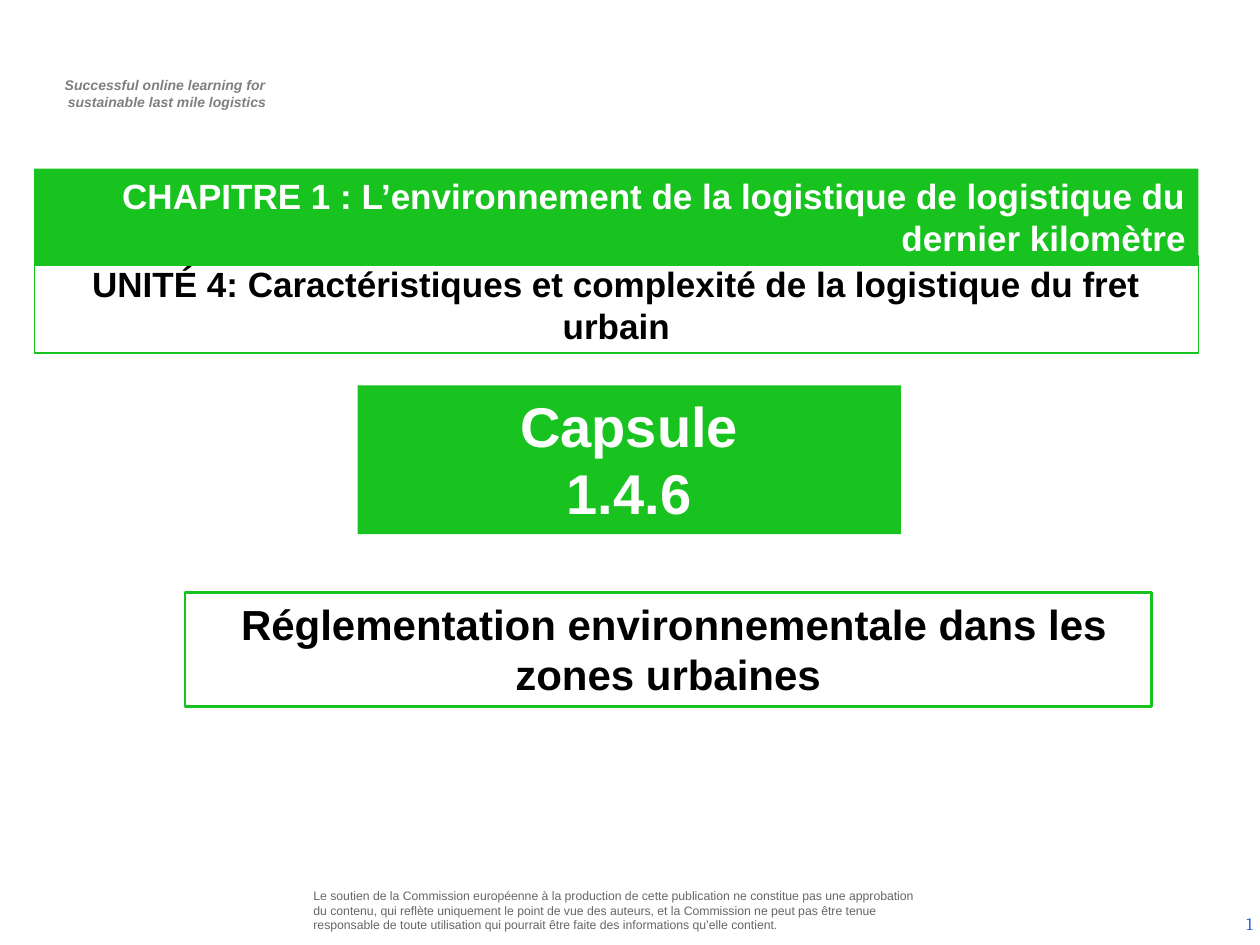
"""Build the title slide of capsule 1.4.6 on urban environmental regulation."""
from pptx import Presentation
from pptx.dml.color import RGBColor
from pptx.enum.shapes import MSO_SHAPE
from pptx.enum.text import MSO_ANCHOR, PP_ALIGN
from pptx.util import Cm, Pt

RECTANGLE = MSO_SHAPE.RECTANGLE
TOP, MIDDLE = MSO_ANCHOR.TOP, MSO_ANCHOR.MIDDLE
LEFT, CENTER, RIGHT = PP_ALIGN.LEFT, PP_ALIGN.CENTER, PP_ALIGN.RIGHT
COLORS = {
    "green": "18C320",
    "white": "FFFFFF",
    "black": "000000",
    "tagline": "7F7F7F",
    "disclaimer": "666666",
    "number": "3366CC",
}


def write(box, lines, size, color, align=CENTER, bold=False, italic=False,
          font="Arial", anchor=TOP, margin=0):
    """Fill a box with one paragraph for each line."""
    frame = box.text_frame
    frame.word_wrap = True
    frame.vertical_anchor = anchor
    frame.text = "\n".join(lines)
    for paragraph in frame.paragraphs:
        paragraph.alignment = align
        if margin:
            properties = paragraph._p.get_or_add_pPr()
            properties.set("marL", str(Cm(margin)))
            properties.set("indent", "0")
        for run in paragraph.runs:
            run.font.name = font
            run.font.size = Pt(size)
            run.font.bold = bold
            run.font.italic = italic
            run.font.color.rgb = RGBColor.from_string(COLORS[color])


prs = Presentation()
prs.slide_width, prs.slide_height = Cm(25.4), Cm(19.05)
slide = prs.slides.add_slide(prs.slide_layouts[6])

tagline = slide.shapes.add_textbox(Cm(0.74), Cm(1.42), Cm(5.16), Cm(0.94))
write(tagline, ["Successful online learning for ", "sustainable last mile logistics"],
      size=8, color="tagline", bold=True, italic=True, margin=0.1)

disclaimer = slide.shapes.add_textbox(Cm(6.07), Cm(17.78), Cm(12.78), Cm(1.14))
write(disclaimer, [
    "Le soutien de la Commission européenne à la production de cette publication "
    "ne constitue pas une approbation du contenu, qui reflète uniquement le point "
    "de vue des auteurs, et la Commission ne peut pas être tenue responsable de "
    "toute utilisation qui pourrait être faite des informations qu’elle contient."],
    size=7, color="disclaimer", align=LEFT)

page_number = slide.shapes.add_textbox(Cm(19.58), Cm(18.11), Cm(5.92), Cm(1.02))
write(page_number, ["1"], size=10, color="number", align=RIGHT, font="Cambria",
      anchor=MIDDLE)

banners = [
    (["Capsule", "1.4.6"], (7.21, 7.77, 10.95, 3), 32, CENTER, None),
    ([" Réglementation environnementale dans les zones urbaines"],
     (3.73, 11.94, 19.48, 2.31), 24, CENTER, 1.5),
    (["CHAPITRE 1 : L’environnement de la logistique de logistique du dernier kilomètre"],
     (0.69, 3.4, 23.47, 1.96), 20, RIGHT, None),
    (["UNITÉ 4: Caractéristiques et complexité de la logistique du fret urbain"],
     (0.69, 5.16, 23.47, 1.96), 20, CENTER, 0.75),
]
for lines, place, size, align, outline in banners:
    banner = slide.shapes.add_shape(RECTANGLE, *(Cm(length) for length in place))
    banner.shadow.inherit = False
    green = RGBColor.from_string(COLORS["green"])
    if outline:
        banner.fill.background()
        banner.line.color.rgb = green
        banner.line.width = Pt(outline)
    else:
        banner.fill.solid()
        banner.fill.fore_color.rgb = green
        banner.line.fill.background()
    write(banner, lines, size=size, color="black" if outline else "white",
          align=align, bold=True)

prs.save("out.pptx")
